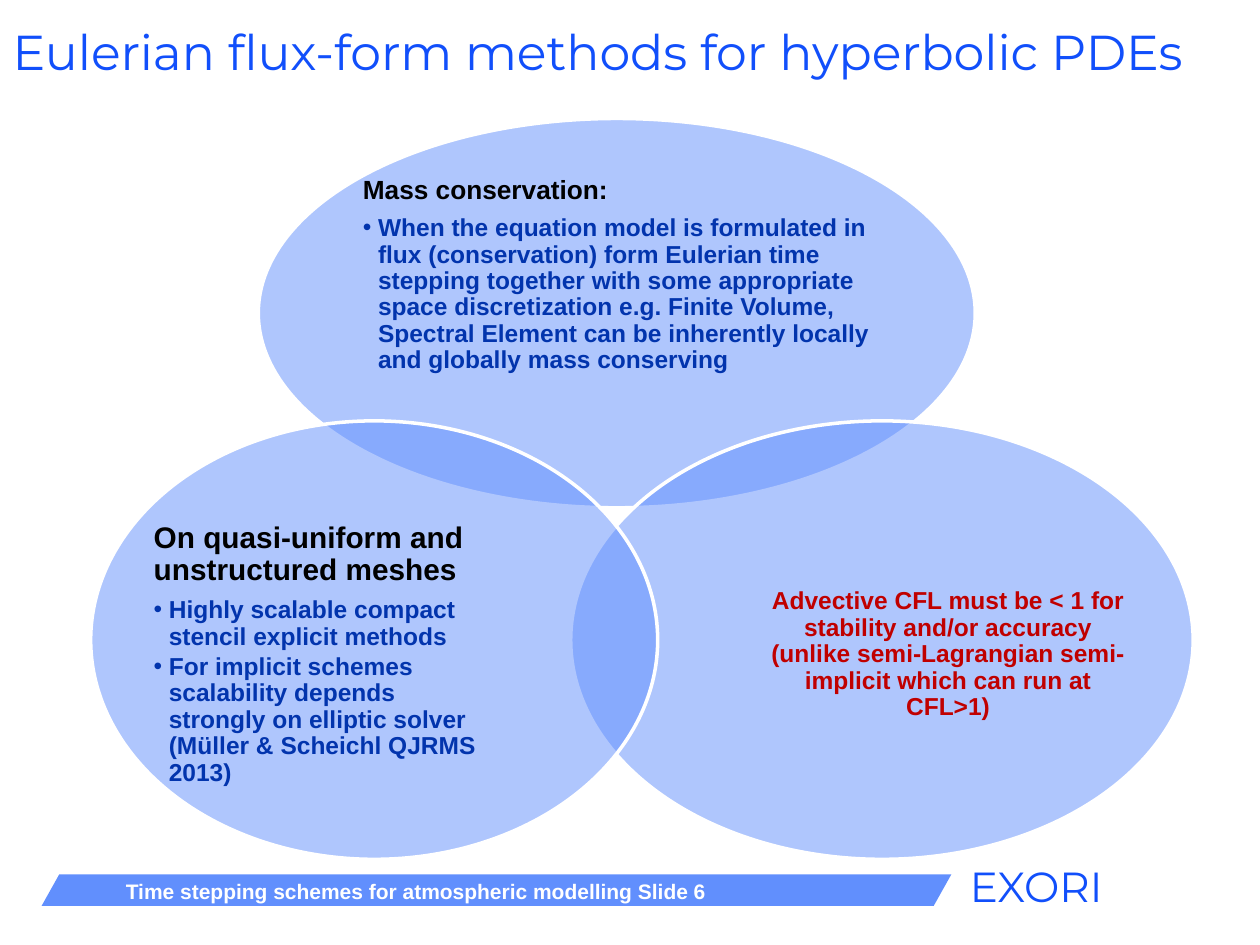
from dataclasses import dataclass

from lxml import etree
from pptx import Presentation
from pptx.dml.color import RGBColor
from pptx.enum.shapes import MSO_SHAPE
from pptx.enum.text import MSO_ANCHOR, MSO_AUTO_SIZE, PP_ALIGN
from pptx.oxml.ns import qn
from pptx.util import Inches, Pt

OVAL, SLANT = MSO_SHAPE.OVAL, MSO_SHAPE.PARALLELOGRAM
LEFT, CENTER = PP_ALIGN.LEFT, PP_ALIGN.CENTER
MIDDLE = MSO_ANCHOR.MIDDLE
NO_FIT = MSO_AUTO_SIZE.NONE
WIDE, HIGH = 10, 7.5
COLS, ROWS = 100, 75


@dataclass(frozen=True)
class Theme:
    body: str = "Arial"
    head: str = "Montserrat"
    brand: str = "114FFB"
    fill: str = "618FFD"
    white: str = "FFFFFF"
    black: str = "000000"
    navy: str = "0234AD"
    red: str = "C00000"
    title: int = 28
    mark: int = 24
    mesh: int = 17
    mass: int = 15
    text: int = 14
    foot: int = 12


THEME = Theme()


def place(box):
    """Turn columns and rows of the grid into slide lengths."""
    x, y, w, h = box
    col, row = WIDE / COLS, HIGH / ROWS
    return [Inches(n) for n in (x * col, y * row, w * col, h * row)]


def apply(item, values):
    for name, value in values.items():
        setattr(item, name, value)


def write(para, text, size, color, face=THEME.body, bold=True):
    run = para.add_run()
    run.text = text
    apply(run.font, {"size": Pt(size), "name": face, "bold": bold})
    run.font.color.rgb = RGBColor.from_string(color)


def bullet(para):
    props = para._p.get_or_add_pPr()
    props.set("marL", str(Inches(0.12)))
    props.set("indent", str(Inches(-0.12)))
    etree.SubElement(props, qn("a:buFont")).set("typeface", THEME.body)
    etree.SubElement(props, qn("a:buChar")).set("char", "•")


def shape(slide, kind, box):
    item = slide.shapes.add_shape(kind, *place(box))
    item.shadow.inherit = False
    item.fill.solid()
    item.fill.fore_color.rgb = RGBColor.from_string(THEME.fill)
    return item


def label(slide, box, text, size, color, **style):
    frame = slide.shapes.add_textbox(*place(box)).text_frame
    frame.word_wrap = False
    write(frame.paragraphs[0], text, size, color, **style)


def title(slide, box, text):
    item = slide.shapes.title
    apply(item, dict(zip(("left", "top", "width", "height"), place(box))))
    frame = item.text_frame
    apply(frame, {"vertical_anchor": MIDDLE, "word_wrap": True,
                  "auto_size": NO_FIT})
    para = frame.paragraphs[0]
    para.alignment = LEFT
    write(para, text, THEME.title, THEME.brand, THEME.head, False)


def oval(slide, box):
    item = shape(slide, OVAL, box)
    tint = item.fill._xPr.find(qn("a:solidFill"))[0]
    etree.SubElement(tint, qn("a:alpha")).set("val", "50000")
    item.line.color.rgb = RGBColor.from_string(THEME.white)
    item.line.width = Pt(2)


def prose(slide, box, lines, align):
    """Write lines of (text, size, color, bulleted) in a box."""
    frame = slide.shapes.add_textbox(*place(box)).text_frame
    apply(frame, {"word_wrap": True, "vertical_anchor": MIDDLE,
                  "margin_left": 0, "margin_right": 0,
                  "margin_top": 0, "margin_bottom": 0})
    for i, (text, size, color, dot) in enumerate(lines):
        para = frame.add_paragraph() if i else frame.paragraphs[0]
        apply(para, {"alignment": align, "line_spacing": 0.9,
                     "space_after": Pt(2 if dot else 6)})
        if dot:
            bullet(para)
        write(para, text, size, color)


def venn(slide, sets):
    for ring, box, lines, align in sets:
        oval(slide, ring)
        prose(slide, box, lines, align)


def footer(slide, box):
    x, y, w, h = box
    label(slide, (x + w + 0.5, y - 1.6, 18, 5.7), "EXORI", THEME.mark,
          THEME.brand, face=THEME.head, bold=False)
    band = shape(slide, SLANT, box)
    band.adjustments[0] = 0.56
    band.line.fill.background()
    label(slide, (x + 5.7, y - 0.2, 50.9, 3),
          "Time stepping schemes for atmospheric modelling Slide 6",
          THEME.foot, THEME.white)


def main():
    deck = Presentation()
    deck.slide_width, deck.slide_height = Inches(WIDE), Inches(HIGH)
    slide = deck.slides.add_slide(deck.slide_layouts[5])
    size, navy, black = THEME.text, THEME.navy, THEME.black
    mass = [
        ("Mass conservation:", THEME.mass, black, False),
        ("When the equation model is formulated in flux (conservation) form "
         "Eulerian time stepping together with some appropriate space "
         "discretization e.g. Finite Volume, Spectral Element can be "
         "inherently locally and globally mass conserving", size, navy, True),
    ]
    limit = [
        ("Advective CFL must be < 1 for stability and/or accuracy (unlike "
         "semi-Lagrangian semi-implicit which can run at CFL>1)",
         size, THEME.red, False),
    ]
    mesh = [
        ("On quasi-uniform and unstructured meshes", THEME.mesh, black, False),
        ("Highly scalable compact stencil explicit methods",
         size, navy, True),
        ("For implicit schemes scalability depends strongly on elliptic "
         "solver (Müller & Scheichl QJRMS 2013)", size, navy, True),
    ]
    footer(slide, (3.3, 69.4, 72.2, 2.5))
    title(slide, (0, 1.3, 102.8, 5.5),
          "Eulerian flux-form methods for hyperbolic PDEs")
    venn(slide, [
        ((20.5, 9.4, 56.9, 30.9), (28.8, 14.9, 40.9, 13.9), mass, LEFT),
        ((45.3, 33.4, 49.4, 34.8), (61.1, 42.4, 28.3, 19.1), limit, CENTER),
        ((7.2, 33.4, 45, 34.8), (12.2, 42.4, 26.3, 19.1), mesh, LEFT),
    ])
    deck.save("out.pptx")


if __name__ == "__main__":
    main()
